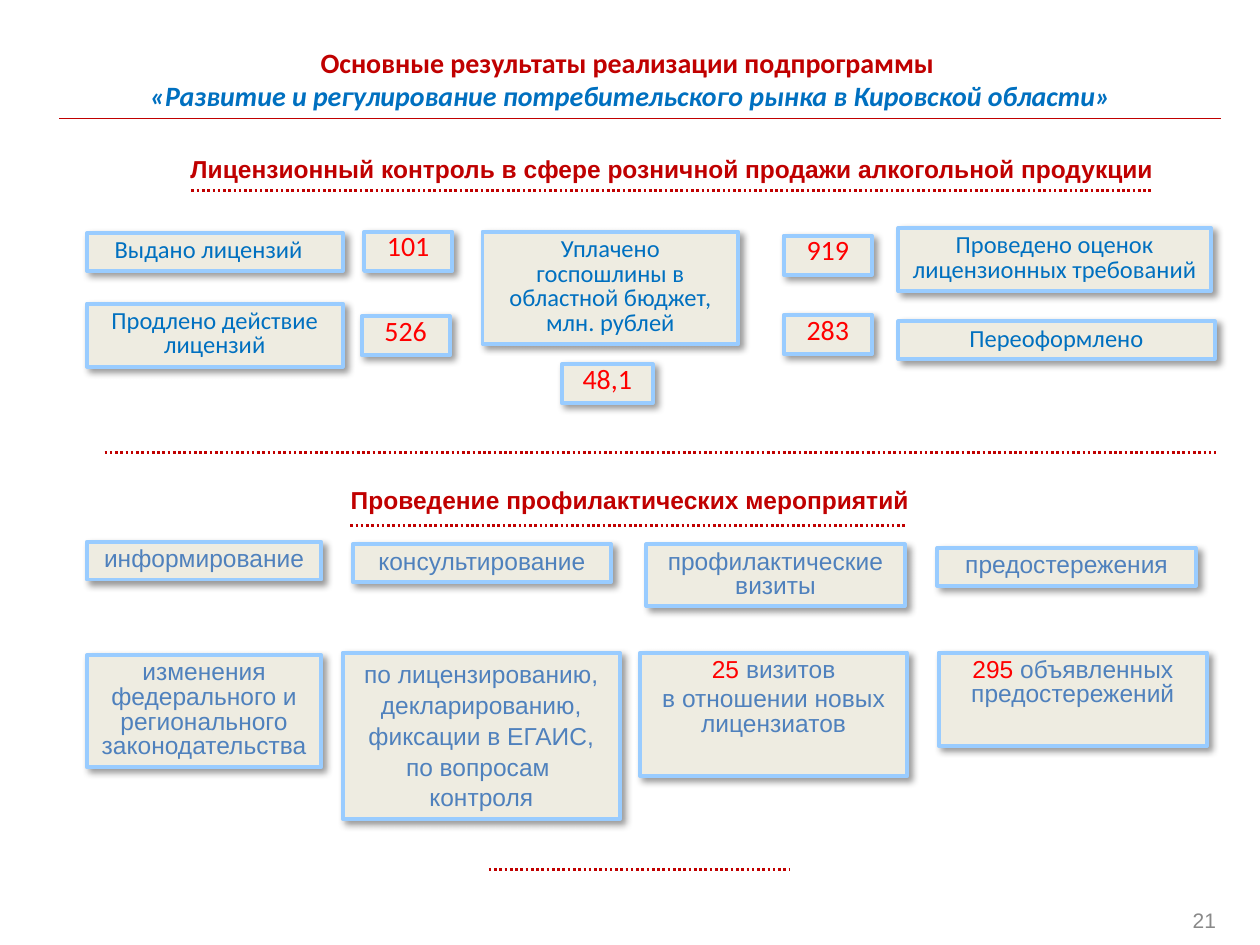
from lxml import etree
from pptx import Presentation
from pptx.dml.color import RGBColor
from pptx.enum import dml, shapes, text
from pptx.oxml import parse_xml
from pptx.oxml.ns import qn
from pptx.util import Inches, Pt

DARK_RED = RGBColor(0xC0, 0x00, 0x00)
RED = RGBColor(0xFF, 0x00, 0x00)
BLUE = RGBColor(0x00, 0x70, 0xC0)
STEEL = RGBColor(0x4F, 0x81, 0xBD)
SKY = RGBColor(0x99, 0xCC, 0xFF)
CREAM = RGBColor(0xEE, 0xEC, 0xE1)
GREY = RGBColor(0x89, 0x89, 0x89)
CENTER = text.PP_ALIGN.CENTER

SHADOW = (
    '<a:effectLst xmlns:a="http://schemas.openxmlformats.org/drawingml/2006/main">'
    '<a:outerShdw blurRad="50800" dist="38100" dir="2700000" algn="tl" rotWithShape="0">'
    '<a:srgbClr val="000000"><a:alpha val="40000"/></a:srgbClr>'
    '</a:outerShdw></a:effectLst>'
)

COMPACT = {"spacing": Pt(14), "before": Pt(2.8)}
LABEL = {"font": "Calibri", "color": BLUE, **COMPACT}
VALUE = {"font": "Calibri", "color": RED, "size": 16, **COMPACT}
MEASURE = {"color": STEEL, **COMPACT}
LOOSE = {"color": STEEL, "before": Pt(1)}
HEADING = {"color": DARK_RED, "bold": True}

# left, top, width, height, paragraphs, format
LICENSING = [
    (0.69, 2.41, 2.03, 0.5, ["Продлено действие лицензий"], LABEL),
    (3.83, 1.84, 2.03, 0.89, ["Уплачено госпошлины в областной бюджет, млн. рублей"], LABEL),
    (7.13, 1.81, 2.48, 0.5, ["Проведено оценок лицензионных требований"], LABEL),
    (7.13, 2.55, 2.51, 0.3, ["Переоформлено"], LABEL),
    (2.89, 1.84, 0.7, 0.31, ["101"], VALUE),
    (2.87, 2.51, 0.7, 0.31, ["526"], VALUE),
    (4.46, 2.89, 0.72, 0.31, ["48,1"], VALUE),
    (6.22, 1.87, 0.7, 0.31, ["919"], VALUE),
    (6.22, 2.5, 0.7, 0.31, ["283"], VALUE),
]
PREVENTION = [
    (0.69, 4.3, 1.86, 0.3, ["информирование"], MEASURE),
    (2.8, 4.32, 2.05, 0.3, ["консультирование"], MEASURE),
    (5.13, 4.32, 2.05, 0.49, ["профилактические визиты"], MEASURE),
    (7.44, 4.35, 2.05, 0.3, ["предостережения"], MEASURE),
    (0.69, 5.2, 1.86, 0.89,
     ["изменения федерального и регионального законодательства"], MEASURE),
    (2.72, 5.18, 2.2, 1.32,
     ["по лицензированию,", "декларированию,", "фиксации в ЕГАИС,",
      "по вопросам \nконтроля"], LOOSE),
    (5.08, 5.18, 2.12, 0.98,
     [[("25 ", {"color": RED}), ("визитов", {})], "в отношении новых лицензиатов"], MEASURE),
    (7.45, 5.18, 2.13, 0.74,
     [[("295 ", {"color": RED}), ("объявленных предостережений", {})]], MEASURE),
]
# left, right, y
DOTTED_RULES = [(1.52, 9.14, 1.51), (0.83, 9.65, 3.59), (2.78, 7.2, 4.17), (3.88, 6.27, 6.9)]


def add_span(para, words, font="Arial", size=14, color=STEEL, bold=False, italic=False):
    for index, line in enumerate(words.split("\n")):
        if index:
            para.add_line_break()
        span = para.add_run()
        span.text = line
        span.font.name = font
        span.font.size = Pt(size)
        span.font.color.rgb = color
        span.font.bold = bold
        span.font.italic = italic


def write(shape, paragraphs, align=CENTER, anchor=text.MSO_ANCHOR.TOP,
          spacing=None, before=Pt(0), **style):
    """Fill a shape; a paragraph is a string or a list of (words, style changes)."""
    frame = shape.text_frame
    frame.word_wrap = True
    frame.auto_size = text.MSO_AUTO_SIZE.NONE
    frame.vertical_anchor = anchor
    for index, content in enumerate(paragraphs):
        para = frame.add_paragraph() if index else frame.paragraphs[0]
        para.alignment = align
        para.space_before = before
        if spacing:
            para.line_spacing = spacing
        spans = [(content, {})] if isinstance(content, str) else content
        for words, changes in spans:
            add_span(para, words, **{**style, **changes})


def add_label(page, left, top, width, height, words, **style):
    box = page.shapes.add_textbox(Inches(left), Inches(top), Inches(width), Inches(height))
    write(box, [words], **style)


def add_card(page, left, top, width, height, paragraphs, **style):
    card = page.shapes.add_shape(shapes.MSO_SHAPE.RECTANGLE, Inches(left), Inches(top),
                                 Inches(width), Inches(height))
    card.fill.solid()
    card.fill.fore_color.rgb = CREAM
    card.line.color.rgb = SKY
    card.line.width = Pt(2.25)
    card._element.spPr.append(parse_xml(SHADOW))
    write(card, paragraphs, **style)
    return card


def add_rule(page, left, right, y, width=1.5, dash=dml.MSO_LINE.ROUND_DOT):
    rule = page.shapes.add_connector(shapes.MSO_CONNECTOR.STRAIGHT, Inches(left), Inches(y),
                                     Inches(right), Inches(y))
    rule.line.color.rgb = DARK_RED
    rule.line.width = Pt(width)
    rule.line.dash_style = dash
    etree.SubElement(rule._element.spPr, qn("a:effectLst"))


def set_title(page):
    title = page.shapes.title
    title.left, title.top = Inches(0.16), Inches(0.31)
    title.width, title.height = Inches(9.69), Inches(0.98)
    subtitle = "«Развитие и регулирование потребительского рынка в Кировской области»"
    write(title, ["Основные результаты реализации подпрограммы ",
                  [(subtitle, {"color": BLUE, "italic": True})]],
          font="Calibri", size=16, **HEADING)


def main():
    deck = Presentation()
    deck.slide_width, deck.slide_height = Inches(10), Inches(7.5)
    page = deck.slides.add_slide(deck.slide_layouts[5])

    set_title(page)
    add_rule(page, 0.47, 9.69, 0.94, width=0.75, dash=dml.MSO_LINE.SOLID)
    for rule in DOTTED_RULES:
        add_rule(page, *rule)

    add_label(page, 1.02, 1.17, 8.63, 0.34,
              "Лицензионный контроль в сфере розничной продажи алкогольной продукции", **HEADING)
    add_label(page, 0.86, 3.8, 8.28, 0.34, "Проведение профилактических мероприятий", **HEADING)

    issued = add_card(page, 0.69, 1.85, 2.03, 0.3, ["Выдано лицензий"],
                      align=text.PP_ALIGN.LEFT, **LABEL)
    issued.text_frame.margin_left = Inches(0.22)
    for *place, paragraphs, style in LICENSING + PREVENTION:
        add_card(page, *place, paragraphs, **style)

    add_label(page, 7.42, 7.1, 2.33, 0.4, "21", size=12, color=GREY,
              align=text.PP_ALIGN.RIGHT, anchor=text.MSO_ANCHOR.MIDDLE)
    deck.save("out.pptx")


if __name__ == "__main__":
    main()
